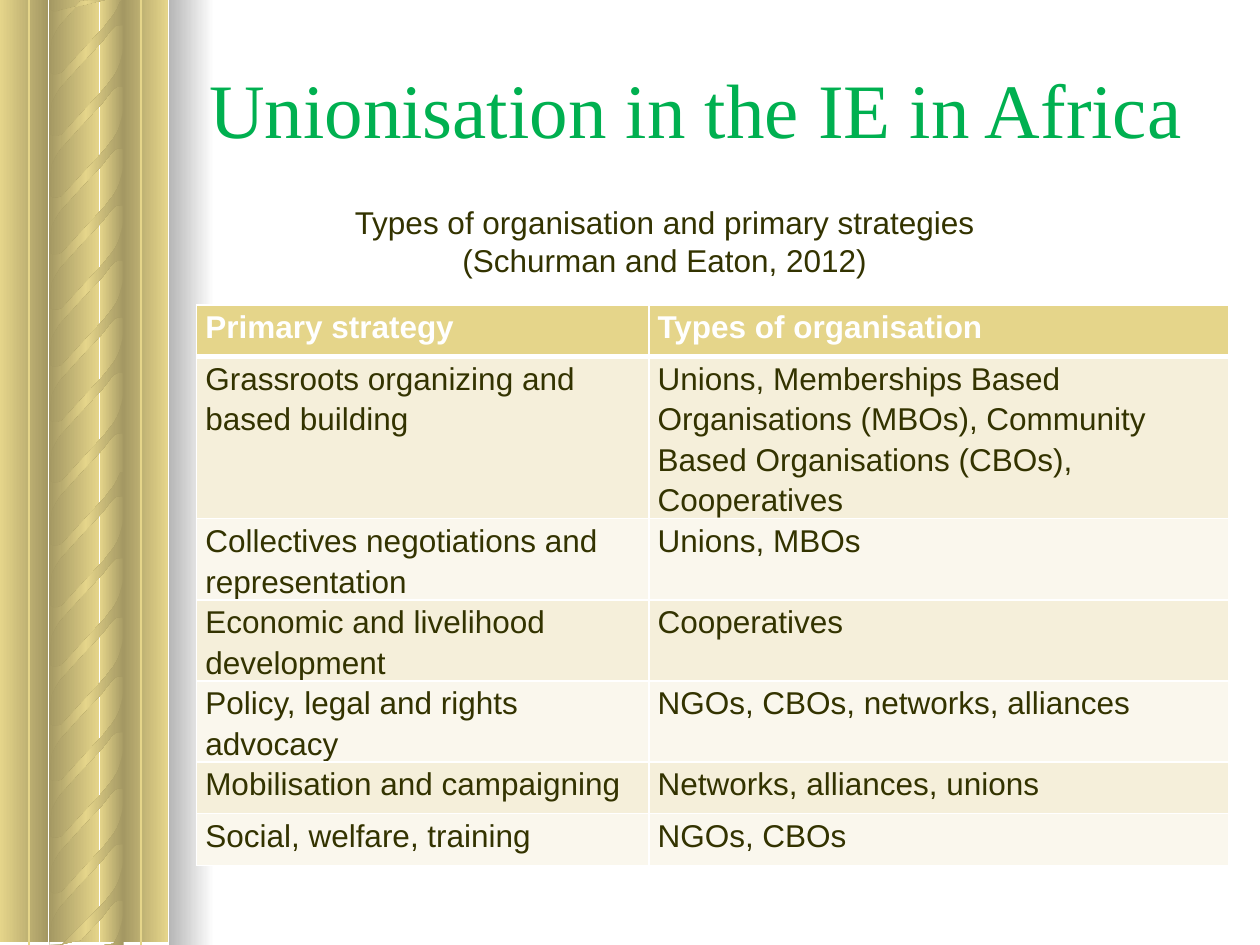
from copy import deepcopy

from pptx import Presentation
from pptx.dml.color import RGBColor
from pptx.enum.shapes import MSO_CONNECTOR as CONNECTOR, MSO_SHAPE as SHAPE
from pptx.enum.text import MSO_ANCHOR as ANCHOR, MSO_AUTO_SIZE as AUTO_SIZE, PP_ALIGN as ALIGN
from pptx.oxml import parse_xml
from pptx.oxml.ns import nsdecls, qn
from pptx.util import Inches, Pt

WIDTH, HEIGHT = 10, 7.5
COLORS = {"gold": "E5D58A", "dark gold": "A49863", "grey": "B6B6B6", "white": "FFFFFF",
          "green": "00B050", "text": "333300", "band odd": "F5EFDA", "band even": "FAF7ED"}
BODY = {"name": "Arial", "size": Pt(18), "color": "text"}

# Column of the ornament: left, width, gradient
PANELS = [(0.79, 0.2, ["gold", "dark gold"]), (0, 0.38, ["gold", "dark gold"]),
          (0.39, 0.4, ["dark gold", "gold"]), (0.98, 0.35, ["dark gold", "gold"])]
# Each half of the column: top and the tops of its rope strands
HALVES = [(3.73, [4.58, 5.05, 5.49, 5.94, 6.38, 6.83, 4.11, 3.62]),
          (0, [0.86, 1.31, 1.75, 2.2, 2.64, 7.25, 0.37, -0.12, -0.62, 3.12])]
HALF_HEIGHT = 3.75
# Outline of one strand in hundredths of an inch, y measured from its top
STRAND = [(98, 9), (98, 33), (97, 32), (93, 32), (91, 33), (88, 36), (81, 45), (64, 63),
          (47, 82), (44, 87), (41, 93), (40, 101), (39, 112), (39, 63), (39, 68), (40, 70),
          (42, 71), (44, 71), (46, 71), (49, 70), (83, 33), (90, 24), (93, 19), (95, 14),
          (97, 6), (98, 0), (98, 20)]

ROWS = [
    ("Primary strategy", "Types of organisation"),
    ("Grassroots organizing and based building",
     "Unions, Memberships Based Organisations (MBOs), Community Based Organisations (CBOs), "
     "Cooperatives"),
    ("Collectives negotiations and representation", "Unions, MBOs"),
    ("Economic and livelihood development", "Cooperatives"),
    ("Policy, legal and rights advocacy", "NGOs, CBOs, networks, alliances"),
    ("Mobilisation and campaigning", "Networks, alliances, unions"),
    ("Social, welfare, training", "NGOs, CBOs"),
]


def rgb(name):
    return RGBColor.from_string(COLORS[name])


def box(left, top, width, height):
    return [Inches(value) for value in (left, top, width, height)]


def set_values(target, values):
    for name, value in values.items():
        setattr(target, name, value)


def write(frame, text, font, **paragraph_format):
    paragraph = frame.paragraphs[0]
    set_values(paragraph, paragraph_format)
    run = paragraph.add_run()
    run.text = text
    set_values(run.font, {key: value for key, value in font.items() if key != "color"})
    run.font.color.rgb = rgb(font["color"])


def fill_gradient(shape, names):
    """Fill with evenly spaced colours from left to right."""
    shape.shadow.inherit = False
    shape.line.fill.background()
    shape.fill.gradient()
    shape.fill.gradient_angle = 0
    stop_list = shape.element.spPr.find(qn("a:gradFill")).find(qn("a:gsLst"))
    for _ in names[2:]:
        stop_list.insert(1, deepcopy(stop_list[0]))
    for index, (stop, name) in enumerate(zip(shape.fill.gradient_stops, names)):
        stop.position = index / (len(names) - 1)
        stop.color.rgb = rgb(name)


def add_panel(slide, left, top, width, height, names):
    fill_gradient(slide.shapes.add_shape(SHAPE.RECTANGLE, *box(left, top, width, height)), names)


def add_strand(slide, top, upper_limit):
    """Draw one strand, cut off at the edges of its part of the column."""
    low, high = round(upper_limit * 100), round(HEIGHT * 100)
    points = [(x, min(max(y + round(top * 100), low), high)) for x, y in STRAND]
    builder = slide.shapes.build_freeform(*points[0], scale=Inches(0.01))
    builder.add_line_segments(points[1:], close=True)
    fill_gradient(builder.convert_to_shape(), ["dark gold", "gold", "dark gold"])


def add_groove(slide, x):
    line = slide.shapes.add_connector(CONNECTOR.STRAIGHT, Inches(x), 0, Inches(x), Inches(HEIGHT))
    line.line.color.rgb = rgb("gold")
    line.line.width = Pt(1)
    line.element.spPr.append(parse_xml(f"<a:effectLst {nsdecls('a')}/>"))


def add_column(slide):
    for top, strand_tops in HALVES:
        for left, width, names in PANELS:
            add_panel(slide, left, top, width, HALF_HEIGHT, names)
        for strand_top in strand_tops:
            add_strand(slide, strand_top, top)
    add_panel(slide, 1.34, 0, 0.36, HEIGHT, ["grey", "white"])
    for x in (0.23, 1.12):
        add_groove(slide, x)


def format_title(slide, text):
    title = slide.shapes.title
    title.element.getparent().append(title.element)  # in front of the column
    set_values(title, dict(zip(("left", "top", "width", "height"), box(1.56, 0.23, 8.19, 1.25))))
    set_values(title.text_frame, {"vertical_anchor": ANCHOR.MIDDLE, "word_wrap": True,
                                  "auto_size": AUTO_SIZE.NONE})
    write(title.text_frame, text,
          {"name": "Times New Roman", "size": Pt(44), "color": "green"}, alignment=ALIGN.LEFT)


def set_borders(cell, widths):
    properties = cell._tc.get_or_add_tcPr()
    for side, width in widths.items():
        properties.append(parse_xml(
            f'<a:ln{side} {nsdecls("a")} w="{Pt(width)}"><a:solidFill>'
            f'<a:srgbClr val="{COLORS["white"]}"/></a:solidFill></a:ln{side}>'))


def add_strategy_table(slide):
    frame = slide.shapes.add_table(len(ROWS), 2, *box(1.56, 2.42, 8.19, 0.41 * len(ROWS)))
    table = frame.table
    for column, width in zip(table.columns, (3.59, 4.6)):
        column.width = Inches(width)
    for row_index, texts in enumerate(ROWS):
        header = row_index == 0
        fill = "gold" if header else "band odd" if row_index % 2 else "band even"
        borders = {"L": 1, "R": 1, "T": 1, "B": 3 if header else 1}
        if row_index == 1:
            del borders["T"]  # the thick rule of the header shows here
        font = {**BODY, "bold": header, "color": "white" if header else "text"}
        for column_index, text in enumerate(texts):
            cell = table.cell(row_index, column_index)
            set_borders(cell, borders)
            set_values(cell, {"margin_left": Inches(0.07), "margin_right": Inches(0.07),
                              "margin_top": 0, "margin_bottom": 0})
            cell.fill.solid()
            cell.fill.fore_color.rgb = rgb(fill)
            write(cell.text_frame, text, font, line_spacing=1.15)
    frame.height = Inches(4.67)


def add_caption(slide, text):
    frame = slide.shapes.add_textbox(*box(2.5, 1.56, 5.55, 0.71)).text_frame
    set_values(frame, {"word_wrap": True, "vertical_anchor": ANCHOR.MIDDLE,
                       "auto_size": AUTO_SIZE.SHAPE_TO_FIT_TEXT})
    write(frame, text, BODY, alignment=ALIGN.CENTER)


def main():
    presentation = Presentation()
    set_values(presentation, {"slide_width": Inches(WIDTH), "slide_height": Inches(HEIGHT)})
    slide = presentation.slides.add_slide(presentation.slide_layouts[5])
    add_column(slide)
    format_title(slide, "Unionisation in the IE in Africa")
    add_strategy_table(slide)
    add_caption(slide, "Types of organisation and primary strategies (Schurman and Eaton, 2012)")
    presentation.save("out.pptx")


if __name__ == "__main__":
    main()
